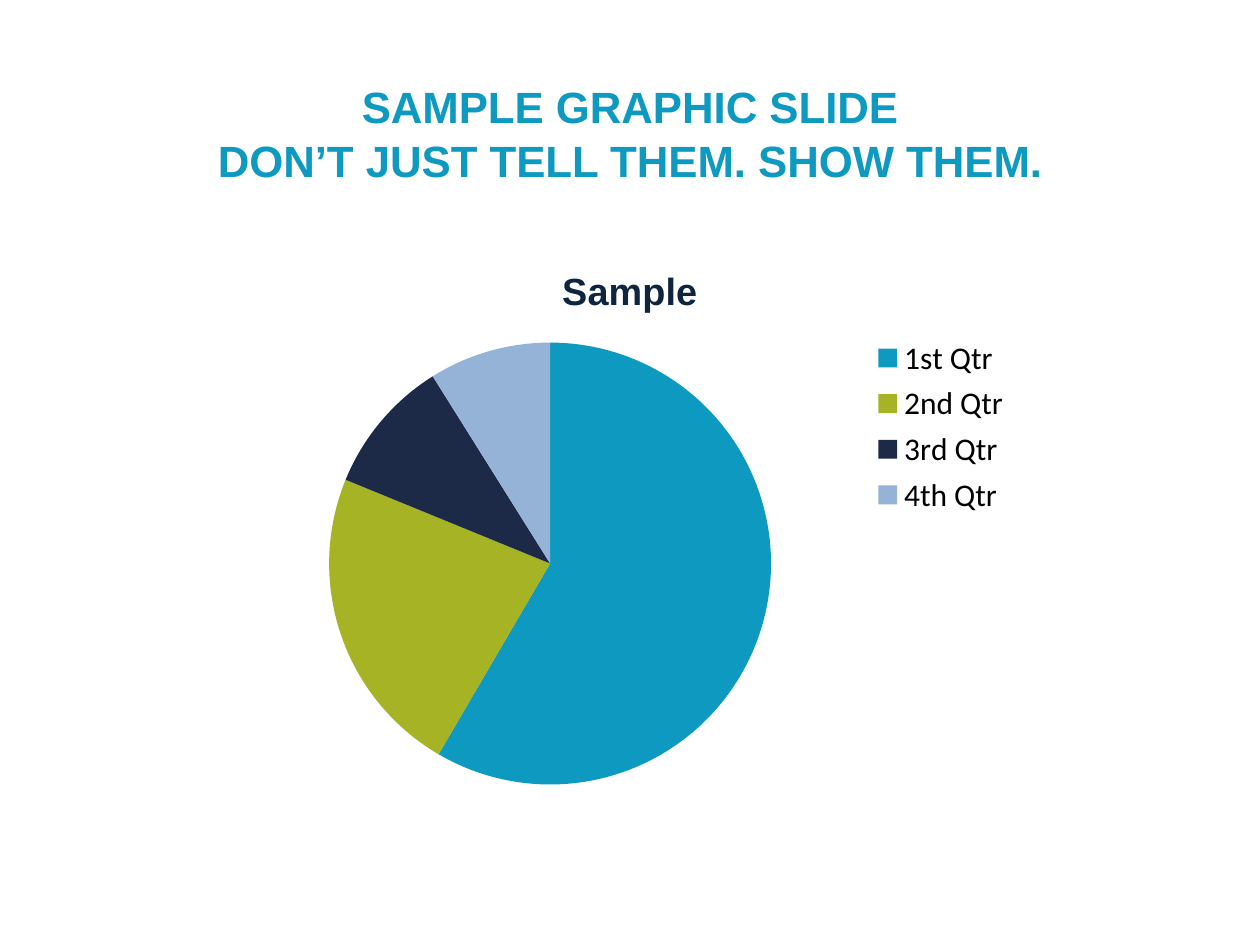
import pptx
import pptx.chart.data
import pptx.dml.color
import pptx.enum.chart
import pptx.enum.text
import pptx.oxml
import pptx.oxml.ns
import pptx.util


def color(value):
    return pptx.dml.color.RGBColor.from_string(value)


def add_layout(part, following_tag, **shares):
    for stale in part.findall(pptx.oxml.ns.qn("c:layout")):
        part.remove(stale)
    target = '<c:layoutTarget val="inner"/>' if following_tag == "c:pieChart" else ""
    modes = '<c:xMode val="edge"/><c:yMode val="edge"/>'
    sizes = "".join(f'<c:{name} val="{share}"/>' for name, share in shares.items())
    layout = pptx.oxml.parse_xml(
        f'<c:layout {pptx.oxml.ns.nsdecls("c")}><c:manualLayout>'
        f"{target}{modes}{sizes}</c:manualLayout></c:layout>"
    )
    part.find(pptx.oxml.ns.qn(following_tag)).addprevious(layout)


deck = pptx.Presentation()
deck.slide_width = pptx.util.Inches(10)
deck.slide_height = pptx.util.Inches(7.5)
page = deck.slides.add_slide(deck.slide_layouts[6])
width, height = deck.slide_width, deck.slide_height

box = page.shapes.add_textbox(
    int(width * 0.09), int(height * 0.07), int(width * 0.82), int(height * 0.14)
)
frame = box.text_frame
frame.word_wrap = True
frame.vertical_anchor = pptx.enum.text.MSO_ANCHOR.MIDDLE
frame.text = "SAMPLE GRAPHIC SLIDE\vDON’T JUST TELL THEM. SHOW THEM."
para = frame.paragraphs[0]
para.alignment = pptx.enum.text.PP_ALIGN.CENTER
para.line_spacing = 1.03
for span in para.runs:
    span.font.name = "Arial"
    span.font.size = pptx.util.Pt(25)
    span.font.bold = True
    span.font.color.rgb = color("0E99C0")

quarters = {
    "1st Qtr": (59, "0E99C0"),
    "2nd Qtr": (23, "A5B324"),
    "3rd Qtr": (10, "1C2947"),
    "4th Qtr": (9, "95B3D7"),
}
data = pptx.chart.data.CategoryChartData()
data.categories = list(quarters)
data.add_series("Series 1", [value for value, fill in quarters.values()])
chart = page.shapes.add_chart(
    pptx.enum.chart.XL_CHART_TYPE.PIE,
    width // 6, int(height * 0.256), width * 2 // 3, int(height * 0.592), data,
).chart
chart.font.name = "Calibri"
chart.font.size = pptx.util.Pt(18)
chart.font.color.rgb = color("000000")

chart.has_title = True
chart.chart_title.text_frame.text = "Sample"
title_font = chart.chart_title.text_frame.paragraphs[0].runs[0].font
title_font.name = "Arial"
title_font.size = pptx.util.Pt(21.6)
title_font.bold = True
title_font.color.rgb = color("0F243E")

plot = chart.plots[0]
plot.vary_by_categories = True
for index, (value, fill) in enumerate(quarters.values()):
    slice_fill = plot.series[0].points[index].format.fill
    slice_fill.solid()
    slice_fill.fore_color.rgb = color(fill)

chart.has_legend = True
chart.legend.position = pptx.enum.chart.XL_LEGEND_POSITION.RIGHT
chart.legend.include_in_layout = False
chart_space = chart.element
plot_area = chart_space.find(".//" + pptx.oxml.ns.qn("c:plotArea"))
legend = chart_space.find(".//" + pptx.oxml.ns.qn("c:legend"))
add_layout(plot_area, "c:pieChart", x=0.14, y=0.18, w=0.53, h=0.79)
add_layout(legend, "c:overlay", x=0.78, y=0.16, w=0.18, h=0.34)

deck.save("out.pptx")
